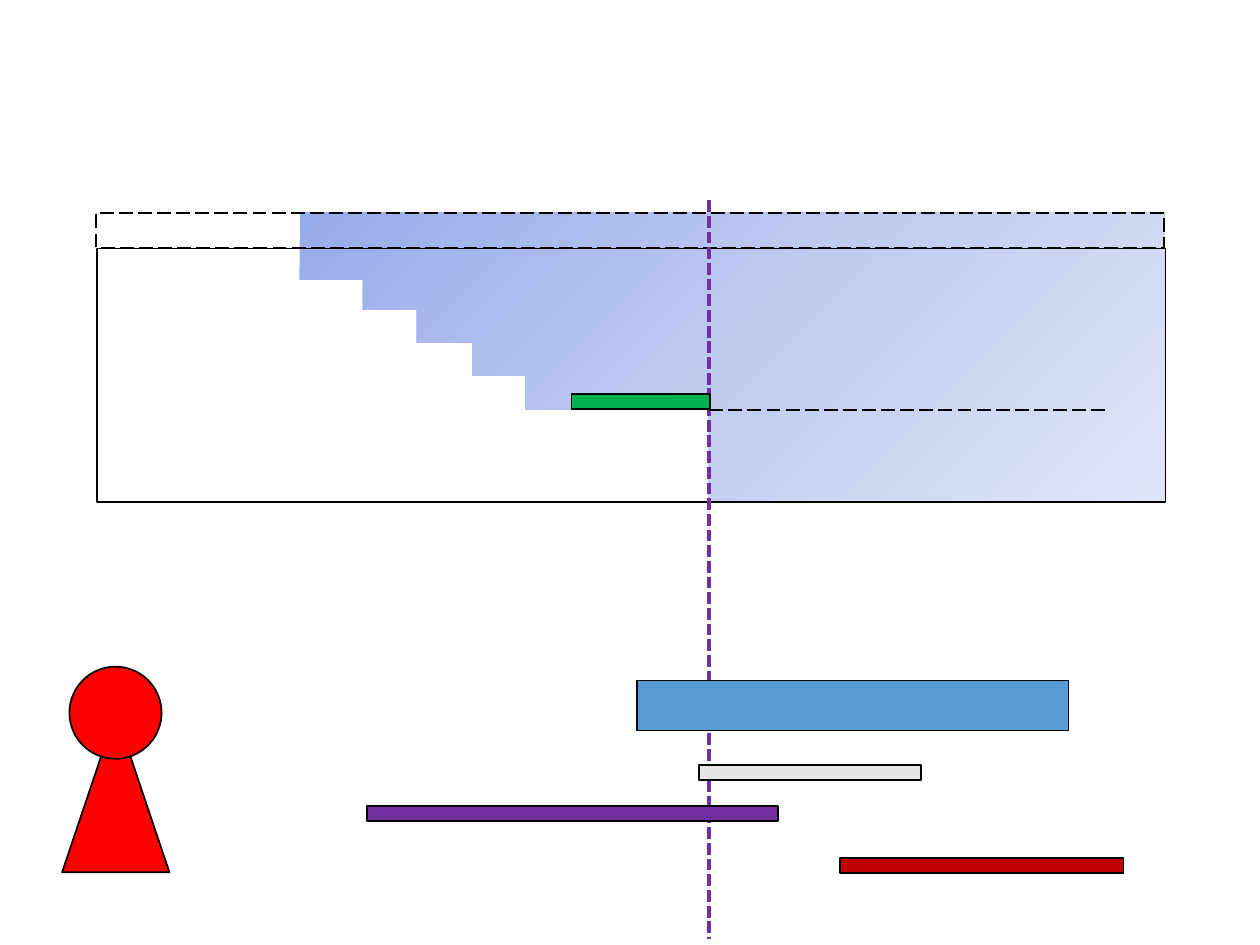
"""Build a slide with a stepped pool section, coloured bars and a pawn figure."""
from copy import deepcopy

from lxml import etree
from pptx import Presentation
from pptx.dml.color import RGBColor
from pptx.enum import dml, shapes as kinds
from pptx.oxml.ns import qn
from pptx.util import Pt

BLACK = RGBColor(0x00, 0x00, 0x00)
GREEN = RGBColor(0x00, 0xB0, 0x50)
PURPLE = RGBColor(0x70, 0x30, 0xA0)
BLUE = RGBColor(0x5B, 0x9B, 0xD5)
GREY = RGBColor(0xE7, 0xE6, 0xE6)
MAROON = RGBColor(0xC0, 0x00, 0x00)
RED = RGBColor(0xFF, 0x00, 0x00)
DEEP = RGBColor(0x96, 0xAB, 0xEA)
MID = RGBColor(0xC0, 0xCB, 0xF0)
PALE = RGBColor(0xE0, 0xE5, 0xF7)
KIND = kinds.MSO_SHAPE
DASH = dml.MSO_LINE


def add_part(parent, kind, box, color=None):
    part = parent.add_shape(kind, *map(Pt, box))
    part.shadow.inherit = False
    if color is None:
        part.fill.background()
    else:
        part.fill.solid()
        part.fill.fore_color.rgb = color
    part.line.color.rgb = BLACK
    part.line.width = Pt(1)
    return part


def add_rule(parent, ends, color, width, dash):
    rule = parent.add_connector(kinds.MSO_CONNECTOR.STRAIGHT, *map(Pt, ends))
    rule.line.color.rgb = color
    rule.line.width = Pt(width)
    rule.line.dash_style = dash
    etree.SubElement(rule._element.spPr, qn("a:effectLst"))


deck = Presentation()
deck.slide_width, deck.slide_height = Pt(720), Pt(540)
slide = deck.slides.add_slide(deck.slide_layouts[6])
items = slide.shapes

top, left, right = 121.2, 171.2, 665.5
steps = [(207.4, 159.8), (238.3, 177.1), (270, 195.8), (300.2, 214.6),
         (405, 234), (right, 287.3)]
points = []
edge = left
for x, y in steps:
    points += [(Pt(edge), Pt(y)), (Pt(x), Pt(y))]
    edge = x
points.append((Pt(right), Pt(top)))
path = items.build_freeform(Pt(left), Pt(top), scale=1.0)
path.add_line_segments(points, close=True)
water = path.convert_to_shape()
water.shadow.inherit = False
water.line.fill.background()
water.fill.gradient()
water.fill.gradient_angle = 315
first = water._element.spPr.find(".//" + qn("a:gs"))
first.addnext(deepcopy(first))
for stop, place, color in zip(water.fill.gradient_stops, (0, 0.5, 1), (DEEP, MID, PALE)):
    stop.position = place
    stop.color.rgb = color

add_part(items, KIND.RECTANGLE, (55.4, 142, 610.6, 145))
rim = add_part(items, KIND.RECTANGLE, (55, 121.6, 610.3, 20.2))
rim.line.dash_style = DASH.LONG_DASH

add_rule(items, (405.3, 114.5, 405.3, 536.4), PURPLE, 2.25, DASH.SQUARE_DOT)
add_part(items, KIND.RECTANGLE, (326.6, 225.3, 79.2, 8.6), GREEN)
add_rule(items, (405.3, 234.2, 633.6, 234.2), BLACK, 1, DASH.LONG_DASH)

bars = [
    ((209.6, 460.6, 235, 8.6), PURPLE),
    ((364, 388.8, 246.6, 28.6), BLUE),
    ((399.5, 437.2, 126.8, 8.6), GREY),
    ((480, 490.2, 162, 8.6), MAROON),
]
for box, color in bars:
    add_part(items, KIND.RECTANGLE, box, color)

pawn = items.add_group_shape().shapes
add_part(pawn, KIND.ISOSCELES_TRIANGLE, (35.5, 407.4, 61.3, 91.1), RED)
add_part(pawn, KIND.OVAL, (39.7, 381, 52.6, 52.6), RED)

deck.save("out.pptx")
